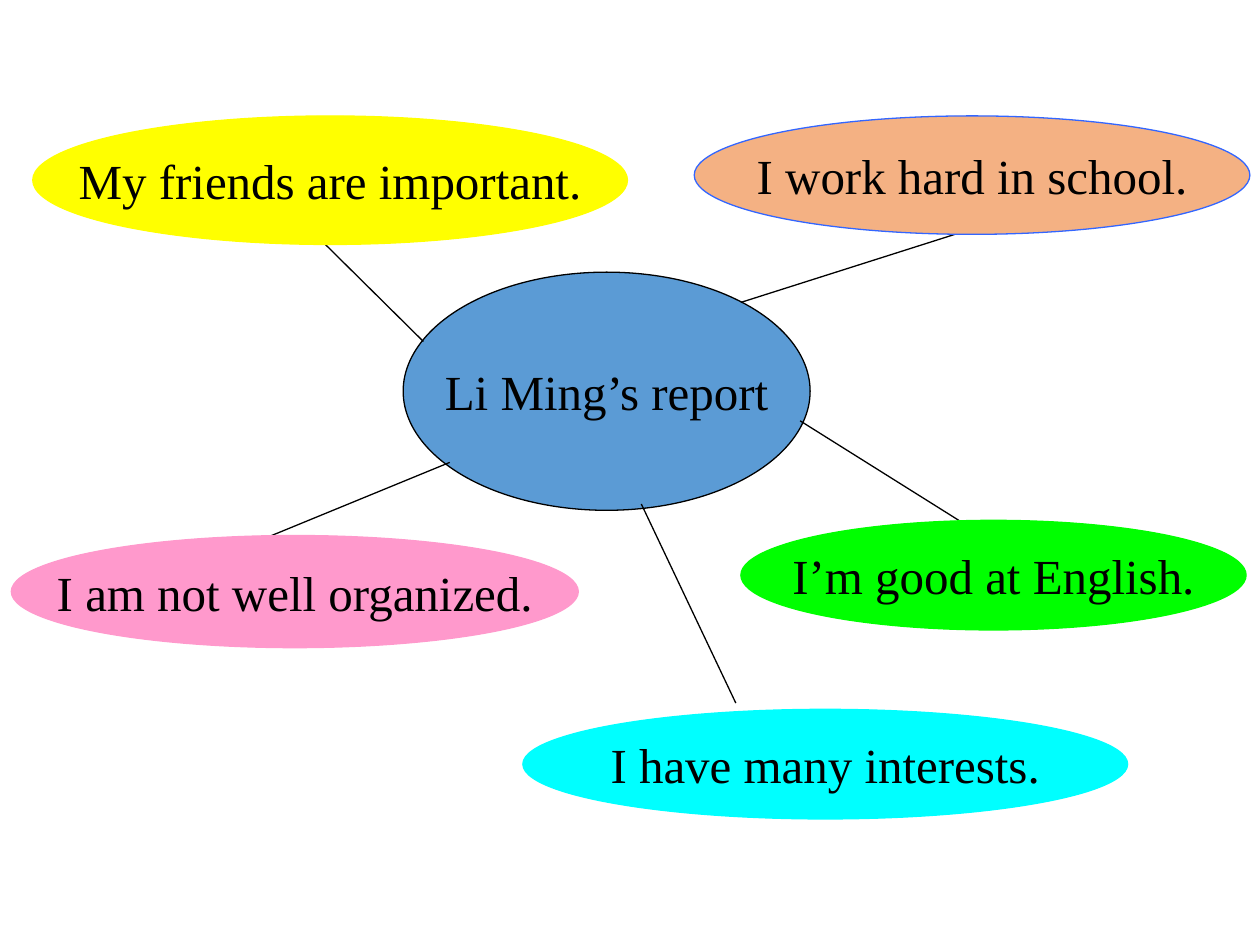
from dataclasses import dataclass

from lxml import etree
from pptx import Presentation
from pptx import util as u
from pptx.dml.color import RGBColor
from pptx.enum import shapes, text
from pptx.oxml.ns import qn


@dataclass(frozen=True)
class Theme:
    font: str = "Times New Roman"
    size: float = 28
    line_width: float = 0.75
    ink: str = "000000"
    center: str = "5B9BD5"
    orange: str = "F4B183"
    blue: str = "3366FF"
    yellow: str = "FFFF00"
    green: str = "00FF00"
    cyan: str = "00FFFF"
    pink: str = "FF99CC"


THEME = Theme()

CENTER_BOX = (3.2, 2.16, 3.23, 1.89)

# Label, box, fill, outline, link start (at the center), link end (at the idea)
IDEAS = [
    ("I work hard in school.", (5.51, 0.92, 4.41, 0.94),
     THEME.orange, THEME.blue, (5.88, 2.4), (7.61, 1.85)),
    ("My friends are important.", (0.26, 0.92, 4.72, 1.02),
     THEME.yellow, THEME.yellow, (3.36, 2.71), (2.41, 1.77)),
    ("I’m good at English.", (5.88, 4.13, 4.01, 0.87),
     THEME.green, THEME.green, (6.35, 3.34), (7.61, 4.13)),
    ("I have many interests.", (4.15, 5.63, 4.8, 0.87),
     THEME.cyan, THEME.cyan, (5.09, 4), (5.84, 5.58)),
    ("I am not well organized.", (0.09, 4.25, 4.5, 0.89),
     THEME.pink, THEME.pink, (3.57, 3.67), (1.84, 4.38)),
]


def color(value):
    return RGBColor.from_string(value)


def style_line(line, value):
    line.color.rgb = color(value)
    line.width = u.Pt(THEME.line_width)


def add_bubble(slide, box, label, fill, outline):
    """Draw an ellipse filling the box, with a centered label."""
    shape = slide.shapes.add_shape(
        shapes.MSO_SHAPE.OVAL, *(u.Inches(length) for length in box))
    shape.shadow.inherit = False
    shape.fill.solid()
    shape.fill.fore_color.rgb = color(fill)
    style_line(shape.line, outline)

    frame = shape.text_frame
    frame.text = label
    frame.word_wrap = False
    frame.vertical_anchor = text.MSO_ANCHOR.MIDDLE
    paragraph = frame.paragraphs[0]
    paragraph.alignment = text.PP_ALIGN.CENTER
    font = paragraph.runs[0].font
    font.name = THEME.font
    font.size = u.Pt(THEME.size)
    font.color.rgb = color(THEME.ink)


def add_link(slide, start, end):
    """Draw a plain straight line between two points."""
    connector = slide.shapes.add_connector(
        shapes.MSO_CONNECTOR.STRAIGHT,
        *(u.Inches(length) for length in start + end))
    style_line(connector.line, THEME.ink)
    etree.SubElement(connector._element.spPr, qn("a:effectLst"))


def add_idea(slide, label, box, fill, outline, start, end):
    """Draw one idea bubble over the end of its link."""
    add_link(slide, start, end)
    add_bubble(slide, box, label, fill, outline)


def main():
    presentation = Presentation()
    presentation.slide_width = u.Inches(10)
    presentation.slide_height = u.Inches(7.5)
    blank_layout = presentation.slide_layouts[6]
    slide = presentation.slides.add_slide(blank_layout)

    # Central topic, then the ideas around it
    add_bubble(slide, CENTER_BOX, "Li Ming’s report", THEME.center, THEME.ink)
    for idea in IDEAS:
        add_idea(slide, *idea)

    presentation.save("out.pptx")


if __name__ == "__main__":
    main()
